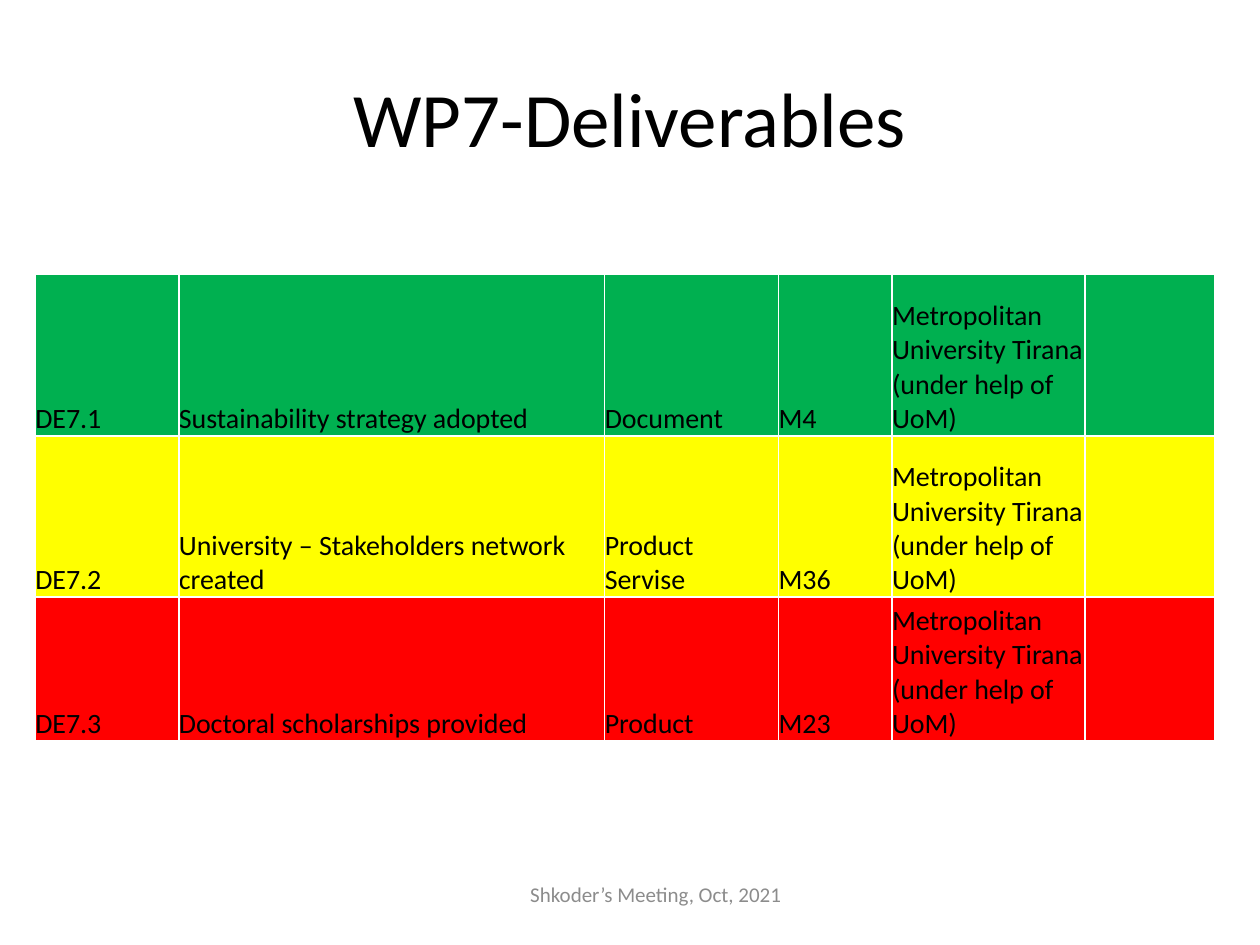
"""Build the WP7 deliverables status slide."""
import pptx
import pptx.dml.color
import pptx.enum.text
import pptx.util
from dataclasses import dataclass

Inches = pptx.util.Inches
RGB = pptx.dml.color.RGBColor.from_string
PP_ALIGN = pptx.enum.text.PP_ALIGN
MSO_ANCHOR = pptx.enum.text.MSO_ANCHOR


@dataclass(frozen=True)
class Theme:
    font: str = "Calibri"
    text: str = "000000"
    muted: str = "8C8C8C"
    done: str = "00B050"
    ongoing: str = "FFFF00"
    late: str = "FF0000"
    title_size: int = 44
    table_size: int = 16
    footer_size: int = 12


THEME = Theme()
LEADER = "Metropolitan University Tirana (under help of UoM)"
DELIVERABLES = [
    (THEME.done, 1.28, ["DE7.1", "Sustainability strategy adopted", "Document", "M4", LEADER, ""]),
    (THEME.ongoing, 1.28, ["DE7.2", "University – Stakeholders network created",
                           "Product\vServise", "M36", LEADER, ""]),
    (THEME.late, 1.14, ["DE7.3", "Doctoral scholarships provided", "Product", "M23", LEADER, ""]),
]
COLUMN_WIDTHS = [1.14, 3.38, 1.38, 0.9, 1.53, 1.03]
TABLE_ORIGIN = (0.28, 2.18)
LABELS = [
    ("WP7-Deliverables", (0.5, 0.3, 9, 1.25), THEME.title_size, THEME.text),
    ("Shkoder’s Meeting, Oct, 2021", (3.43, 6.9, 3.55, 0.4), THEME.footer_size, THEME.muted),
]


def write(tf, text, size, color, align):
    tf.text = text
    p = tf.paragraphs[0]
    p.alignment = align
    p.font.name = THEME.font
    p.font.size = pptx.util.Pt(size)
    p.font.color.rgb = RGB(color)


def add_label(s, text, box, size, color):
    tf = s.shapes.add_textbox(*map(Inches, box)).text_frame
    tf.word_wrap = True
    tf.vertical_anchor = MSO_ANCHOR.MIDDLE
    write(tf, text, size, color, PP_ALIGN.CENTER)


def add_deliverables(s):
    size = (sum(COLUMN_WIDTHS), sum(height for _, height, _ in DELIVERABLES))
    table = s.shapes.add_table(len(DELIVERABLES), len(COLUMN_WIDTHS),
                               *map(Inches, TABLE_ORIGIN + size)).table
    table.first_row = table.horz_banding = False
    for column, width in zip(table.columns, COLUMN_WIDTHS):
        column.width = Inches(width)
    for row, (status, height, texts) in zip(table.rows, DELIVERABLES):
        row.height = Inches(height)
        for cell, text in zip(row.cells, texts):
            cell.fill.solid()
            cell.fill.fore_color.rgb = RGB(status)
            cell.vertical_anchor = MSO_ANCHOR.BOTTOM
            cell.margin_left = cell.margin_right = cell.margin_top = cell.margin_bottom = 0
            write(cell.text_frame, text, THEME.table_size, THEME.text, PP_ALIGN.LEFT)


def main():
    prs = pptx.Presentation()
    prs.slide_width, prs.slide_height = Inches(10), Inches(7.5)
    s = prs.slides.add_slide(prs.slide_layouts[6])
    add_deliverables(s)
    for label in LABELS:
        add_label(s, *label)
    prs.save("out.pptx")


if __name__ == "__main__":
    main()
